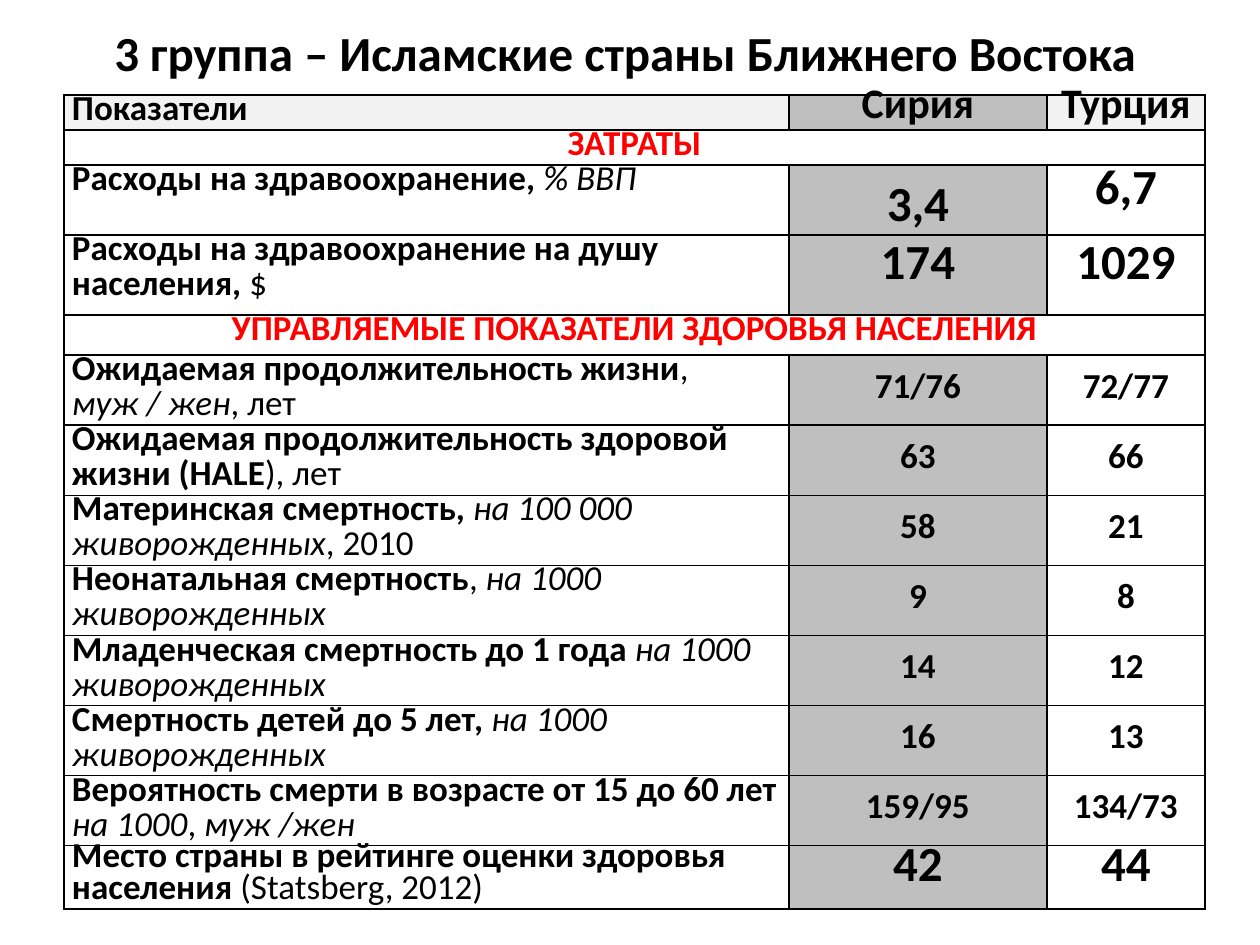
from lxml import etree
from pptx import Presentation, util as u
from pptx.dml.color import RGBColor
from pptx.enum import text
from pptx.oxml.ns import qn

PX = 914400 // 126
FONT = "Calibri"
COLORS = {"ink": "000000", "section": "FF0000", "header": "F2F2F2", "syria": "BFBFBF"}
B, I, N = "bold", "italic", "normal"
LEFT, CENTER = text.PP_ALIGN.LEFT, text.PP_ALIGN.CENTER
TOP, MIDDLE, BOTTOM = (text.MSO_ANCHOR.TOP, text.MSO_ANCHOR.MIDDLE,
                       text.MSO_ANCHOR.BOTTOM)

TITLE = "3 группа – Исламские страны Ближнего Востока"
TITLE_BOX = (94, 16, 1062, 72)
TABLE_AT = (64, 95)
COLUMNS = (725, 258, 158)
HEADER = ("Показатели", "Сирия", "Турция")
PER_1000 = ("на 1000 живорожденных", I)

# Sections: heading, heading height, rows of (label runs, values, value size, height)
SECTIONS = [
    ("ЗАТРАТЫ", 35, [
        ([("Расходы на здравоохранение, ", B), ("% ВВП", I)], ("3,4", "6,7"), 28, 70),
        ([("Расходы на здравоохранение на душу населения, ", B), ("$", N)],
         ("174", "1029"), 28, 80),
    ]),
    ("УПРАВЛЯЕМЫЕ ПОКАЗАТЕЛИ ЗДОРОВЬЯ НАСЕЛЕНИЯ", 40, [
        ([("Ожидаемая продолжительность жизни", B), (", ", N), ("муж / жен", I),
          (", лет", N)], ("71/76", "72/77"), 20, 70),
        ([("Ожидаемая продолжительность здоровой жизни (HALE", B), ("), лет", N)],
         ("63", "66"), 20, 70),
        ([("Материнская смертность, ", B), ("на 100\u00a0000 живорожденных", I),
          (", 2010", N)], ("58", "21"), 20, 70),
        ([("Неонатальная смертность", B), (", ", N), PER_1000], ("9", "8"), 20, 70),
        ([("Младенческая смертность до 1 года ", B), PER_1000], ("14", "12"), 20, 70),
        ([("Смертность детей до 5 лет, ", B), PER_1000], ("16", "13"), 20, 70),
        ([("Вероятность смерти в возрасте от 15 до 60 лет ", B), ("на 1000", I),
          (", ", N), ("муж /жен", I)], ("159/95", "134/73"), 20, 70),
        ([("Место страны в рейтинге оценки здоровья населения ", B),
          ("(Statsberg, 2012)", N)], ("42", "44"), 28, 63),
    ]),
]
HEADER_HEIGHT = 35
LOW_VALUE = "3,4"


def write(frame, runs, size, align, color="ink", spacing=None):
    """Fill a text frame with one paragraph of styled runs."""
    para = frame.paragraphs[0]
    para.alignment = align
    if spacing:
        para.line_spacing = u.Pt(spacing)
    for words, style in runs:
        span = para.add_run()
        span.text = words
        font = span.font
        font.name, font.size = FONT, u.Pt(size)
        font.bold, font.italic = style == B, style == I
        font.color.rgb = RGBColor.from_string(COLORS[color])


def add_borders(cell):
    """Draw a thin black line on all four sides of a cell."""
    props = cell._tc.get_or_add_tcPr()
    for place, side in enumerate(("lnL", "lnR", "lnT", "lnB")):
        line = etree.Element(qn("a:" + side), w=str(u.Pt(1)))
        fill = etree.SubElement(line, qn("a:solidFill"))
        etree.SubElement(fill, qn("a:srgbClr"), val=COLORS["ink"])
        props.insert(place, line)


def set_cell(cell, runs, size=20, align=CENTER, anchor=TOP, fill=None,
             color="ink", spacing=20):
    """Write a table cell and set its fill, margins and anchor."""
    cell.margin_left = cell.margin_right = 8 * PX
    cell.margin_top = cell.margin_bottom = 0
    cell.vertical_anchor = anchor
    if fill:
        cell.fill.solid()
        cell.fill.fore_color.rgb = RGBColor.from_string(COLORS[fill])
    else:
        cell.fill.background()
    write(cell.text_frame, runs, size, align, color, spacing)


def add_section(table, row, heading):
    """Write a red heading across the whole table."""
    table.cell(row, 0).merge(table.cell(row, len(COLUMNS) - 1))
    set_cell(table.cell(row, 0), [(heading, B)], color="section")


def add_indicator(table, row, label, values, size, height):
    """Write one indicator with the values of both countries."""
    spacing = 18 if height < 70 else 20
    set_cell(table.cell(row, 0), label, align=LEFT, spacing=spacing)
    for column, (value, fill) in enumerate(zip(values, ("syria", None)), 1):
        anchor = BOTTOM if value == LOW_VALUE else MIDDLE
        set_cell(table.cell(row, column), [(value, B)], size, anchor=anchor, fill=fill)


def add_table(page):
    """Build the table of indicators."""
    heights = [HEADER_HEIGHT]
    for _, heading_height, indicators in SECTIONS:
        heights += [heading_height] + [item[-1] for item in indicators]
    box = (*TABLE_AT, sum(COLUMNS), sum(heights))
    table = page.shapes.add_table(len(heights), len(COLUMNS),
                                  *(n * PX for n in box)).table
    table.first_row = table.horz_banding = False
    for column, width in zip(table.columns, COLUMNS):
        column.width = width * PX
    for row, height in zip(table.rows, heights):
        row.height = height * PX

    name, *countries = HEADER
    set_cell(table.cell(0, 0), [(name, B)], align=LEFT, anchor=MIDDLE, fill="header")
    for column, (country, fill) in enumerate(zip(countries, ("syria", "header")), 1):
        set_cell(table.cell(0, column), [(country, B)], 24, fill=fill)
    row = 1
    for heading, _, indicators in SECTIONS:
        add_section(table, row, heading)
        for row, indicator in enumerate(indicators, row + 1):
            add_indicator(table, row, *indicator)
        row += 1
    for cell in table.iter_cells():
        add_borders(cell)


deck = Presentation()
deck.slide_width, deck.slide_height = 1260 * PX, 945 * PX
page = deck.slides.add_slide(deck.slide_layouts[6])
add_table(page)
title = page.shapes.add_textbox(*(n * PX for n in TITLE_BOX)).text_frame
title.word_wrap = True
title.auto_size = text.MSO_AUTO_SIZE.SHAPE_TO_FIT_TEXT
write(title, [(TITLE, B)], 28, CENTER)
deck.save("out.pptx")
